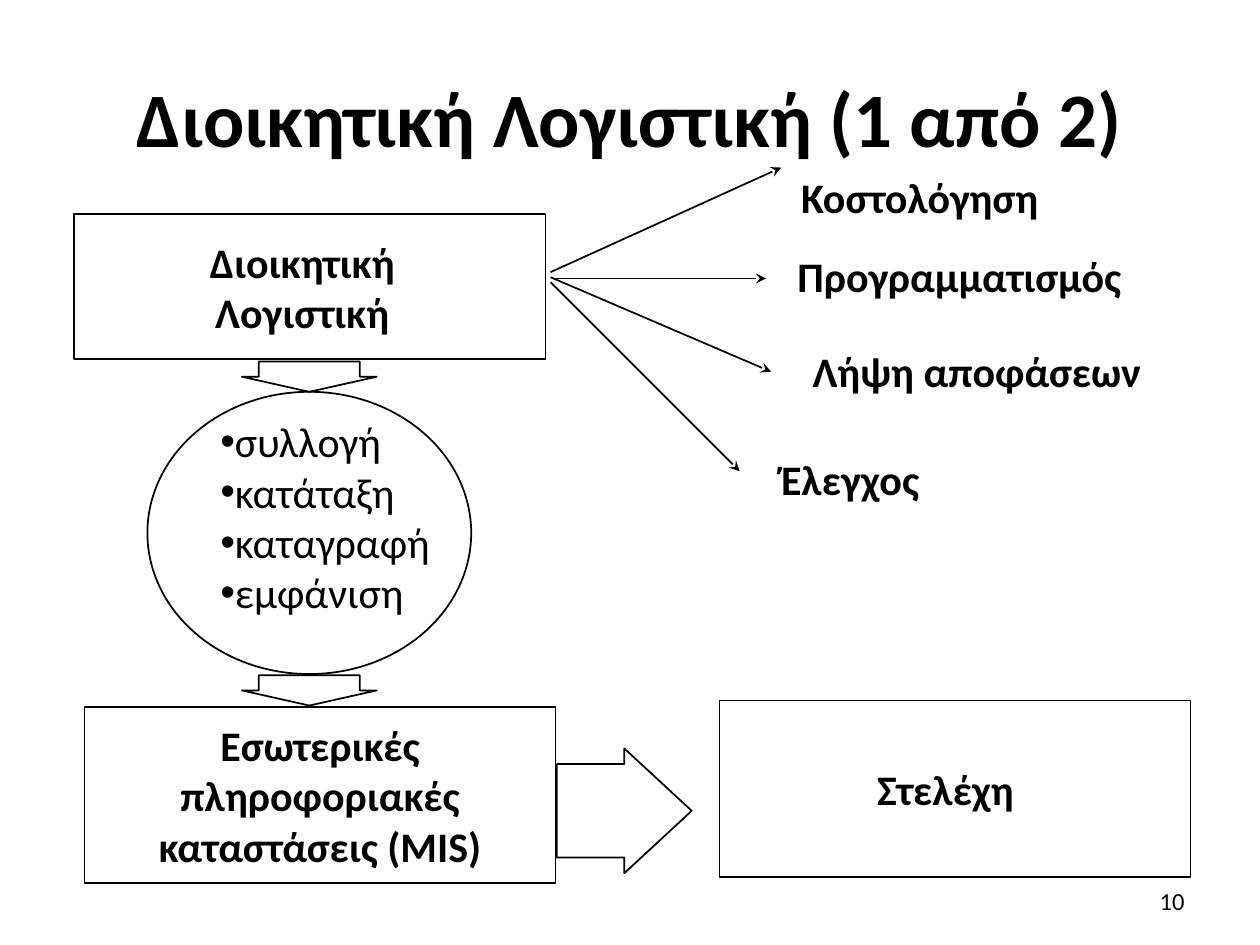
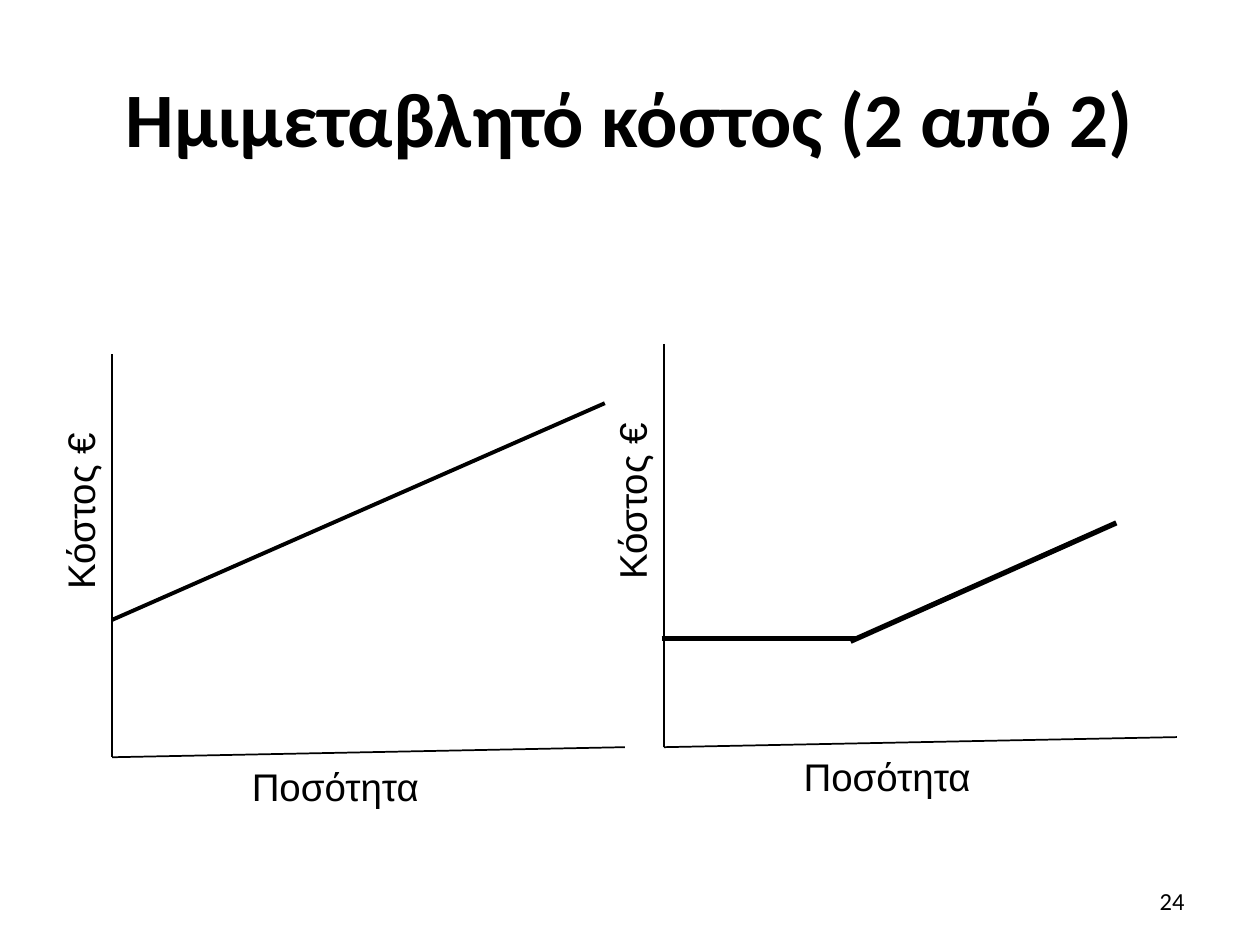
from lxml import etree
from pptx import Presentation
from pptx import util as u
from pptx.dml.color import RGBColor
from pptx.enum import shapes, text
from pptx.oxml.ns import qn

COLORS = {"ink": "000000", "paper": "FFFFFF"}
BODY, AXIS = "Calibri", "Arial"
COLUMNS, ROWS = 100, 75
ALIGN = text.PP_ALIGN
MIDDLE = text.MSO_ANCHOR.MIDDLE
SHAPE = shapes.MSO_SHAPE


def color(key):
    return RGBColor.from_string(COLORS[key])


def write(shape, content, size=24, font=BODY, bold=False, align=ALIGN.LEFT,
          anchor=text.MSO_ANCHOR.TOP, wrap=False, bullet=None, right=1):
    """Fill a shape with one paragraph per line of content."""
    frame = shape.text_frame
    frame.word_wrap = wrap
    frame.vertical_anchor = anchor
    frame.margin_right = u.Inches(right / 10)
    for i, line in enumerate(content.split("\n")):
        paragraph = frame.add_paragraph() if i else frame.paragraphs[0]
        paragraph.alignment = align
        if bullet:
            properties = paragraph._p.get_or_add_pPr()
            etree.SubElement(properties, qn("a:buFont")).set("typeface", AXIS)
            etree.SubElement(properties, qn("a:buChar")).set("char", bullet)
        run = paragraph.add_run()
        run.text = line
        run.font.size = u.Pt(size)
        run.font.name = font
        run.font.bold = bold
        run.font.color.rgb = color("ink")


class Deck:
    """Shared style and the current slide; positions are grid columns and rows."""

    def __init__(self):
        self.show = Presentation()
        self.show.slide_width, self.show.slide_height = u.Inches(10), u.Inches(7.5)
        self.slide = None

    def grid(self, *lengths):
        units = (self.show.slide_width / COLUMNS, self.show.slide_height / ROWS)
        return [round(length * units[i % 2]) for i, length in enumerate(lengths)]

    def start(self, title, number):
        self.slide = self.show.slides.add_slide(self.show.slide_layouts[5])
        self.slide.background.fill.solid()
        self.slide.background.fill.fore_color.rgb = color("paper")
        heading = self.slide.shapes.title
        heading.left, heading.top, heading.width, heading.height = self.grid(5, 3, 90, 12.5)
        write(heading, title, size=44, bold=True, align=ALIGN.CENTER,
              anchor=MIDDLE, wrap=True)
        self.label((71.7, 69.5, 23.3, 4), str(number), size=14,
                   align=ALIGN.RIGHT, anchor=MIDDLE, wrap=True, grow=False)

    def label(self, place, content, grow=True, upward=False, **style):
        box = self.slide.shapes.add_textbox(*self.grid(*place))
        write(box, content, **style)
        if grow:
            box.text_frame.auto_size = text.MSO_AUTO_SIZE.SHAPE_TO_FIT_TEXT
        if upward:
            box.element.txBody.find(qn("a:bodyPr")).set("vert", "vert270")

    def outline(self, kind, place, content=None, adjust=(), **style):
        shape = self.slide.shapes.add_shape(kind, *self.grid(*place))
        shape.shadow.inherit = False
        shape.fill.background()
        shape.line.color.rgb = color("ink")
        shape.line.width = u.Pt(1)
        for i, value in enumerate(adjust):
            shape.adjustments[i] = value
        if content:
            write(shape, content, bold=True, align=ALIGN.CENTER, anchor=MIDDLE, **style)

    def line(self, start, end, width=1, arrow=False):
        link = self.slide.shapes.add_connector(
            shapes.MSO_CONNECTOR.STRAIGHT, *self.grid(*start, *end))
        link.line.color.rgb = color("ink")
        link.line.width = u.Pt(width)
        properties = link.element.spPr
        if arrow:
            etree.SubElement(properties.find(qn("a:ln")), qn("a:tailEnd")).set("type", "stealth")
        etree.SubElement(properties, qn("a:effectLst"))


def management_accounting(deck):
    deck.start("Διοικητική Λογιστική (1 από 2)", 10)

    # Flow from accounting to the executives
    box_width, box_height = 37.4, 14
    deck.outline(SHAPE.RECTANGLE, (5.9, 17, box_width, 11.5), "Διοικητική\nΛογιστική", right=2.2)
    deck.outline(SHAPE.OVAL, (11.7, 31.1, 25.7, 22.4))
    deck.label((16.5, 32.5, 20.1, 17), "συλλογή\nκατάταξη\nκαταγραφή\nεμφάνιση", bullet="•")
    for arrow_top in (28.7, 53.6):
        deck.outline(SHAPE.DOWN_ARROW, (19.2, arrow_top, 10.7, 2.4), adjust=(0.75, 0.5))
    deck.outline(SHAPE.RECTANGLE, (6.7, 56.1, box_width, box_height),
                 "Εσωτερικές\nπληροφοριακές\nκαταστάσεις (MIS)")
    deck.outline(SHAPE.RIGHT_ARROW, (44.2, 59.4, 10.7, 9.9), adjust=(0.75, 0.54))
    deck.outline(SHAPE.RECTANGLE, (57.1, 55.6, box_width, box_height), "Στελέχη", right=2.5)

    # Purposes: arrow start, arrow end, label corner and width
    purposes = [
        ("Κοστολόγηση", (43.7, 21.6), (62, 13.3), (62.6, 13.1), 21.7),
        ("Προγραμματισμός", (44.1, 22.1), (60.8, 22.1), (62.3, 19.4), 27.8),
        ("Λήψη αποφάσεων", (43.7, 22), (61.2, 29.5), (63.5, 26.9), 28.1),
        ("Έλεγχος", (43.7, 22.4), (58.7, 37.4), (61, 35.5), 20.2),
    ]
    for purpose, start, end, corner, width in purposes:
        deck.line(start, end, arrow=True)
        deck.label((*corner, width, 5), purpose, bold=True, wrap=purpose == "Έλεγχος")


def semi_variable_cost(deck):
    deck.start("Ημιμεταβλητό κόστος (2 από 2)", 24)

    # Axes and their names, placed from each origin
    for x, y in ((8.9, 60.1), (52.7, 59.3)):
        deck.line((x, y), (x + 40.7, y - 0.8))
        deck.line((x, y - 32), (x, y))
        deck.label((x - 4.9, y - 32, 5.7, 25), "Κόστος €", size=22, font=AXIS,
                   align=ALIGN.CENTER, wrap=True, upward=True)
        deck.label((x + 10.1, y, 16.3, 4.7), "Ποσότητα", size=22, font=AXIS)

    # Cost curves: steady rise, then flat followed by a rise
    deck.line((8.9, 49.2), (48, 32), width=2.25)
    deck.line((52.5, 50.7), (68.1, 50.7), width=3)
    deck.line((67.5, 50.9), (88.6, 41.5), width=3)


def main():
    deck = Deck()
    management_accounting(deck)
    semi_variable_cost(deck)
    deck.show.save("out.pptx")


if __name__ == "__main__":
    main()
